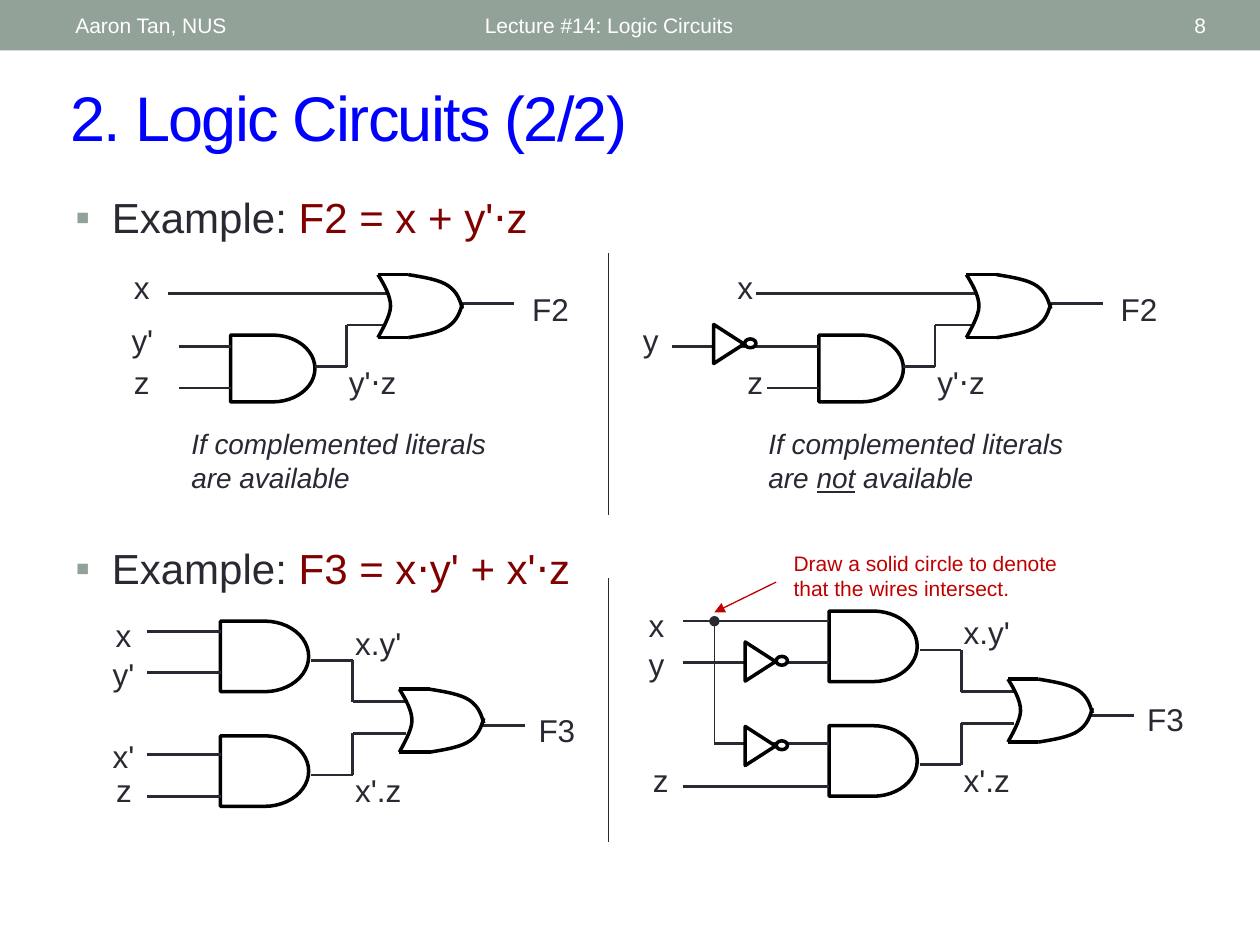
import pptx
import pptx.util
import pptx.dml.color
import pptx.enum.shapes
import pptx.enum.text
import pptx.oxml.ns
import lxml.etree

Inches, Pt = pptx.util.Inches, pptx.util.Pt
SHAPE = pptx.enum.shapes.MSO_SHAPE
ALIGN = pptx.enum.text.PP_ALIGN
ANCHOR = pptx.enum.text.MSO_ANCHOR
qn = pptx.oxml.ns.qn

COLORS = {"band": "93A299", "title": "0000FF", "ink": "292934", "formula": "800000",
          "gate": "000000", "note": "C00000", "white": "FFFFFF"}

HEADER = [("Lecture #14: Logic Circuits", 3.75, 4.5, ALIGN.LEFT),
          ("8", 8.72, 0.95, ALIGN.RIGHT),
          ("Aaron Tan, NUS", 0.5, 3.17, ALIGN.LEFT)]
EXAMPLES = [("F2 = x + y'⋅z", 1.47, 0.7), ("F3 = x⋅y' + x'⋅z", 4.26, 0.58)]
CAPTIONS = [(1.42, [("If complemented literals are available", {"italic": True})]),
            (6, [("If complemented literals are ", {"italic": True}),
                 ("not", {"italic": True, "underline": True}),
                 (" available", {"italic": True})])]
DIVIDERS = [[(4.83, 2.01), (4.83, 4.09)], [(4.83, 4.59), (4.83, 6.68)]]

# Parts shared by both circuits of an example, placed for the left one.
# Labels are (text, left, top, width, align).
F2_CORE = {
    "and": [(1.83, 2.66, 0.67, 0.53)], "or": (3, 2.18),
    "wires": [[(2.5, 2.91), (2.75, 2.91), (2.75, 2.58), (3.05, 2.58)],
              [(1.33, 2.33), (3.08, 2.33)], [(1.42, 3.08), (1.83, 3.08)],
              [(3.67, 2.41), (4.08, 2.41)]],
    "labels": [("F2", 4.08, 2.25, 0.58, ALIGN.CENTER), ("y'⋅z", 2.67, 2.83, 0.58, ALIGN.LEFT)]}
F3_CORE = {
    "and": [(1.75, 4.93, 0.7, 0.56), (1.75, 5.84, 0.7, 0.56)], "or": (3.17, 5.47),
    "wires": [[(2.47, 5.24), (2.8, 5.24), (2.8, 5.57), (3.22, 5.57)],
              [(2.47, 6.15), (2.8, 6.15), (2.8, 5.82), (3.22, 5.82)],
              [(3.83, 5.76), (4.17, 5.76)]],
    "labels": [("F3", 4.17, 5.59, 0.5, ALIGN.CENTER), ("x.y'", 2.72, 4.9, 0.62, ALIGN.LEFT),
               ("x'.z", 2.72, 6.07, 0.62, ALIGN.LEFT)]}

# Each circuit: core, its shift, then input labels, input wires and inverters.
CIRCUITS = [
    (F2_CORE, 0, 0, [("x", 0.96, 2.08, 0.33), ("y'", 0.92, 2.5, 0.42), ("z", 0.96, 2.83, 0.33)],
     [[(1.42, 2.75), (1.83, 2.75)]], []),
    (F2_CORE, 4.67, 0, [("x", 5.75, 2.08, 0.33), ("y", 5, 2.5, 0.33), ("z", 5.83, 2.83, 0.33)],
     [[(5.33, 2.75), (6.5, 2.75)]], [(5.63, 2.61)]),
    (F3_CORE, 0, 0, [("x", 0.77, 4.84, 0.42), ("y'", 0.77, 5.15, 0.42),
                     ("x'", 0.77, 5.8, 0.42), ("z", 0.82, 6.07, 0.33)],
     [[(1.17, y), (1.75, y)] for y in (5.01, 5.34, 5.99, 6.32)], []),
    (F3_CORE, 4.83, -0.08, [("x", 5, 4.76, 0.42), ("y", 5, 5.07, 0.42), ("z", 5.08, 5.99, 0.33)],
     [[(left, y), (6.58, y)] for left, y in
      ((5.42, 4.93), (5.42, 5.26), (5.67, 5.9), (5.42, 6.24))],
     [(5.88, 5.13), (5.88, 5.8)]),
]

# Bezier curves of an OR gate, from its top left corner: a start, then three points a piece.
OR_HEIGHT = 0.5
OR_BACK = [(0, 0), (0.05, 0.08), (0.1, 0.17), (0.1, 0.25), (0.1, 0.33), (0.02, 0.46), (0, 0.5)]
OR_NOSE = [(0.24, 0), (0.36, 0.02), (0.49, 0.04), (0.56, 0.09),
           (0.63, 0.14), (0.65, 0.2), (0.67, 0.27)]

deck = pptx.Presentation()
deck.slide_width, deck.slide_height = Inches(10), Inches(7.5)
page = deck.slides.add_slide(deck.slide_layouts[5])
shapes = page.shapes


def color(name):
    return pptx.dml.color.RGBColor.from_string(COLORS[name])


def style_run(run, size, ink, **effects):
    run.font.name, run.font.size = "Arial", Pt(size)
    run.font.color.rgb = color(ink)
    for effect, value in effects.items():
        setattr(run.font, effect, value)


def add_text(spans, at, size, ink="ink", align=ALIGN.LEFT, anchor=ANCHOR.TOP):
    """Add a text box; spans are (text, font effects), an effect "ink" changes the colour."""
    box = shapes.add_textbox(*map(Inches, at))
    box.text_frame.word_wrap = True
    box.text_frame.vertical_anchor = anchor
    para = box.text_frame.paragraphs[0]
    para.alignment = align
    for text, effects in spans:
        run = para.add_run()
        run.text = text
        style_run(run, size, **{"ink": ink, **effects})
    return para


def add_bullet(para):
    properties = para._p.get_or_add_pPr()
    properties.set("marL", str(Inches(0.29)))
    properties.set("indent", str(-Inches(0.29)))
    bullet_color = lxml.etree.SubElement(properties, qn("a:buClr"))
    lxml.etree.SubElement(bullet_color, qn("a:srgbClr"), val=COLORS["band"])
    lxml.etree.SubElement(properties, qn("a:buFont"), typeface="Arial")
    lxml.etree.SubElement(properties, qn("a:buChar"), char="▪")


def add_wire(points, ink="ink", width=1.5, end=None):
    """Join the points with straight lines; end is (headEnd or tailEnd, arrow type)."""
    for start, stop in zip(points, points[1:]):
        wire = shapes.add_connector(pptx.enum.shapes.MSO_CONNECTOR.STRAIGHT,
                                    *map(Inches, start + stop))
        wire.line.color.rgb = color(ink)
        wire.line.width = Pt(width)
        if end:
            lxml.etree.SubElement(wire.line._ln, qn("a:" + end[0]), type=end[1])
        lxml.etree.SubElement(wire._element.spPr, qn("a:effectLst"))


def outline(shape, fill=None):
    shape.shadow.inherit = False
    shape.line.color.rgb = color("gate")
    shape.line.width = Pt(2)
    if fill:
        shape.fill.solid()
        shape.fill.fore_color.rgb = color(fill)
    else:
        shape.fill.background()


def add_curve(points):
    """Build an open freeform, then turn each three line segments into a Bezier piece."""
    start, *rest = [(Inches(x), Inches(y)) for x, y in points]
    builder = shapes.build_freeform(*start)
    builder.add_line_segments(rest, close=False)
    curve = builder.convert_to_shape()
    outline(curve)
    track = next(curve._element.iter(qn("a:path")))
    segments = track.findall(qn("a:lnTo"))
    for first in range(0, len(segments), 3):
        piece = lxml.etree.SubElement(track, qn("a:cubicBezTo"))
        for segment in segments[first:first + 3]:
            piece.append(segment[0])
            track.remove(segment)


def add_or_gate(left, top):
    lower_nose = [(x, OR_HEIGHT - y) for x, y in OR_NOSE]
    for curve in (OR_BACK, OR_NOSE, lower_nose):
        add_curve([(left + x, top + y) for x, y in curve])
    for y in (top, top + OR_HEIGHT):
        add_wire([(left, y), (left + 0.24, y)], "gate", 2)


def add_inverter(left, top):
    triangle = shapes.add_shape(SHAPE.FLOWCHART_MERGE, *map(Inches, (left, top, 0.31, 0.24)))
    triangle.rotation = 270
    bubble = shapes.add_shape(SHAPE.OVAL, *map(Inches, (left + 0.28, top + 0.08, 0.09, 0.07)))
    outline(triangle, "white")
    outline(bubble, "white")


def add_circuit(core, dx, dy, inputs, input_wires, inverters):
    for left, top, width, height in core["and"]:
        outline(shapes.add_shape(SHAPE.FLOWCHART_DELAY,
                                 *map(Inches, (left + dx, top + dy, width, height))))
    for points in core["wires"]:
        add_wire([(x + dx, y + dy) for x, y in points])
    for points in input_wires:
        add_wire(points)
    add_or_gate(core["or"][0] + dx, core["or"][1] + dy)
    for corner in inverters:
        add_inverter(*corner)
    labels = [(text, left + dx, top + dy, width, align)
              for text, left, top, width, align in core["labels"]]
    labels += [label + (ALIGN.CENTER,) for label in inputs]
    for text, left, top, width, align in labels:
        add_text([(text, {})], (left, top, width, 0.4), 18, align=align)


band = shapes.add_shape(SHAPE.RECTANGLE, 0, 0, deck.slide_width, Inches(0.4))
band.shadow.inherit = False
band.fill.solid()
band.fill.fore_color.rgb = color("band")
band.line.fill.background()

title = shapes.title
title.left, title.top, title.width, title.height = map(Inches, (0.46, 0.57, 9.07, 0.7))
title.text_frame.text = "2. Logic Circuits (2/2)"
title.text_frame.vertical_anchor = ANCHOR.MIDDLE
title.text_frame.auto_size = pptx.enum.text.MSO_AUTO_SIZE.NONE
title_para = title.text_frame.paragraphs[0]
title_para.alignment = ALIGN.LEFT
style_run(title_para.runs[0], 36, "title")
title_para.runs[0].font._element.set("spc", "-100")

for text, left, width, align in HEADER:
    add_text([(text, {})], (left, 0.02, width, 0.36), 12, "white", align, ANCHOR.MIDDLE)
for formula, top, height in EXAMPLES:
    example = add_text([("Example: ", {}), (formula, {"ink": "formula"})],
                       (0.5, top, 9, height), 24)
    example.space_before = Pt(2)
    add_bullet(example)
for circuit in CIRCUITS:
    add_circuit(*circuit)
for left, spans in CAPTIONS:
    add_text(spans, (left, 3.34, 2.75, 0.64), 16)
for points in DIVIDERS:
    add_wire(points, width=0.75)

add_wire([(5.67, 4.93), (5.67, 5.9)], width=0.75, end=("headEnd", "oval"))
add_wire([(6.16, 4.62), (5.67, 4.86)], "note", 0.75, ("tailEnd", "triangle"))
add_text([("Draw a solid circle to denote that the wires intersect.", {})],
         (6.2, 4.32, 2.32, 0.5), 12, "note")

deck.save("out.pptx")
